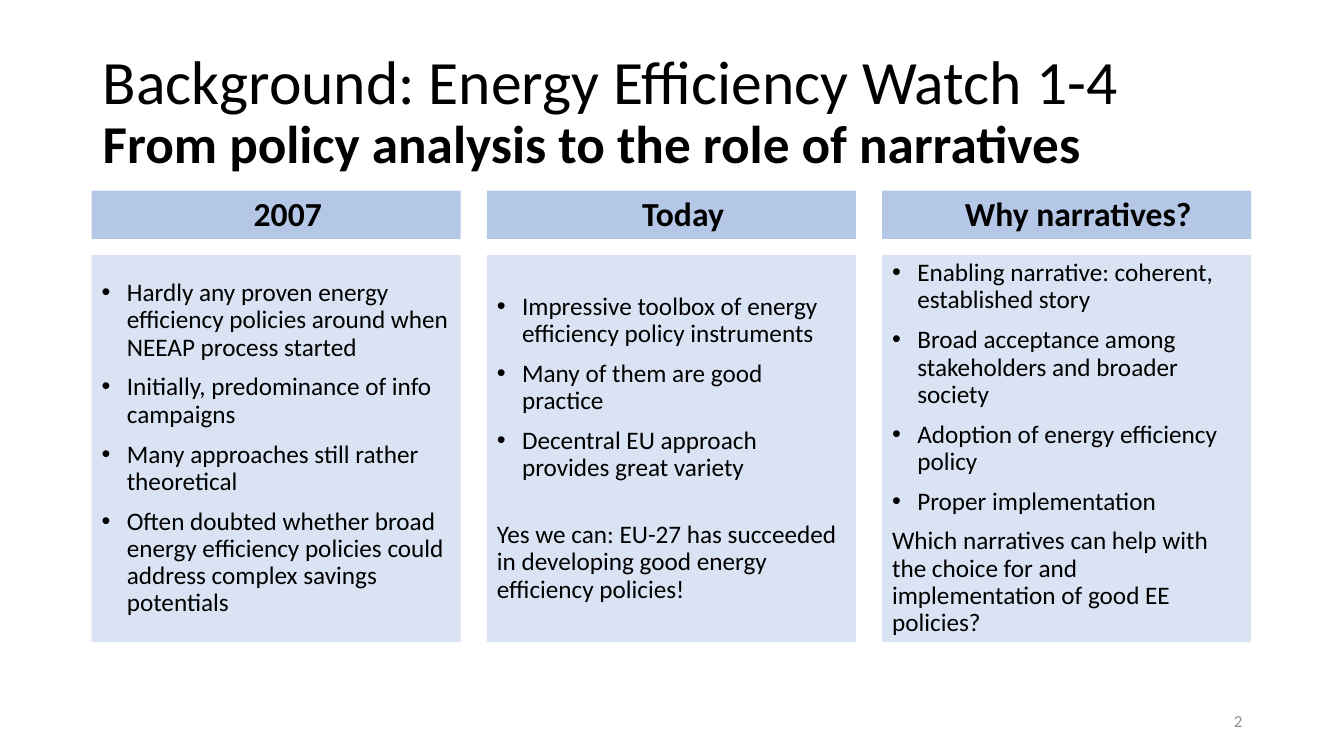
from lxml import etree
from pptx import Presentation
from pptx.dml.color import RGBColor
from pptx.enum.shapes import MSO_SHAPE
from pptx.enum.text import MSO_ANCHOR, PP_ALIGN
from pptx.oxml.ns import qn
from pptx.util import Inches, Pt

RECTANGLE = MSO_SHAPE.RECTANGLE
MIDDLE, BOTTOM = MSO_ANCHOR.MIDDLE, MSO_ANCHOR.BOTTOM
LEFT, CENTER, RIGHT = PP_ALIGN.LEFT, PP_ALIGN.CENTER, PP_ALIGN.RIGHT

COLORS = {"ink": "000000", "header": "B4C7E7", "body": "DAE3F3", "number": "8C8C8C"}
FONT = "Calibri"

# Column grid, in inches
GRID_LEFT, COLUMN_PITCH, COLUMN_WIDTH = 0.91, 3.92, 3.66
GRID_TOP, GRID_HEIGHT = 1.89, 4.48
HEADER_HEIGHT, HEADER_GAP = 0.48, 0.16
BULLET_INDENT, HEADER_INDENT = 0.25, 0.23

# Heading, bullet points, closing statement, space before the closing statement
COLUMNS = [
    ("2007", [
        "Hardly any proven energy efficiency policies around when NEEAP process started",
        "Initially, predominance of info campaigns",
        "Many approaches still rather theoretical",
        "Often doubted whether broad energy efficiency policies could address "
        "complex savings potentials",
    ], None, 0),
    ("Today", [
        "Impressive toolbox of energy efficiency policy instruments",
        "Many of them are good practice",
        "Decentral EU approach provides great variety",
    ], "Yes we can: EU-27 has succeeded in developing good energy efficiency policies!", 19.5),
    ("Why narratives?", [
        "Enabling narrative: coherent, established story",
        "Broad acceptance among stakeholders and broader society",
        "Adoption of energy efficiency policy",
        "Proper implementation",
    ], "Which narratives can help with the choice for and implementation of good EE policies?", 0),
]


def add_text(paragraph, text, size=18, bold=False, color="ink", align=LEFT,
             line_spacing=0.9, before=0, after=0, indent=0, bullet=False):
    properties = paragraph._p.get_or_add_pPr()
    if indent:
        properties.set("marL", str(Inches(indent)))
    if bullet:
        properties.set("indent", str(-Inches(indent)))
        etree.SubElement(properties, qn("a:buFont"), typeface="Arial")
        etree.SubElement(properties, qn("a:buChar"), char="•")
    paragraph.alignment = align
    paragraph.line_spacing = line_spacing
    paragraph.space_before, paragraph.space_after = Pt(before), Pt(after)
    run = paragraph.add_run()
    run.text = text
    run.font.name, run.font.size, run.font.bold = FONT, Pt(size), bold
    run.font.color.rgb = RGBColor.from_string(COLORS[color])


def add_panel(slide, box, fill, anchor):
    panel = slide.shapes.add_shape(RECTANGLE, *map(Inches, box))
    panel.shadow.inherit = False
    panel.fill.solid()
    panel.fill.fore_color.rgb = RGBColor.from_string(COLORS[fill])
    panel.line.fill.background()
    panel.text_frame.word_wrap = True
    panel.text_frame.vertical_anchor = anchor
    return panel.text_frame


def add_label(slide, box):
    frame = slide.shapes.add_textbox(*map(Inches, box)).text_frame
    frame.word_wrap = True
    frame.vertical_anchor = MIDDLE
    return frame.paragraphs[0]


def add_title(slide, box):
    title = add_label(slide, box)
    add_text(title, "Background: Energy Efficiency Watch 1-4", size=44)
    title.add_line_break()
    add_text(title, "From policy analysis to the role of narratives", size=38, bold=True)


def add_column(slide, box, heading, points, closing, closing_gap):
    left, top, width, height = box
    # Heading bar
    header = add_panel(slide, (left, top, width, HEADER_HEIGHT), "header", BOTTOM)
    add_text(header.paragraphs[0], heading, size=24, bold=True, align=CENTER,
             indent=HEADER_INDENT)
    # Bullet points and closing statement
    offset = HEADER_HEIGHT + HEADER_GAP
    body = add_panel(slide, (left, top + offset, width, height - offset), "body", MIDDLE)
    for index, point in enumerate(points):
        paragraph = body.add_paragraph() if index else body.paragraphs[0]
        add_text(paragraph, point, after=9, indent=BULLET_INDENT, bullet=True)
    if closing:
        add_text(body.add_paragraph(), closing, before=closing_gap, after=9)


def add_page_number(slide, box):
    add_text(add_label(slide, box), "2", size=12, color="number", align=RIGHT, line_spacing=1)


def main():
    presentation = Presentation()
    presentation.slide_width, presentation.slide_height = Inches(13.33), Inches(7.5)
    slide = presentation.slides.add_slide(presentation.slide_layouts[6])
    add_title(slide, (0.92, 0.4, 11.5, 1.45))
    for index, column in enumerate(COLUMNS):
        left = GRID_LEFT + index * COLUMN_PITCH
        add_column(slide, (left, GRID_TOP, COLUMN_WIDTH, GRID_HEIGHT), *column)
    add_page_number(slide, (9.42, 6.95, 3, 0.4))
    presentation.save("out.pptx")


if __name__ == "__main__":
    main()
